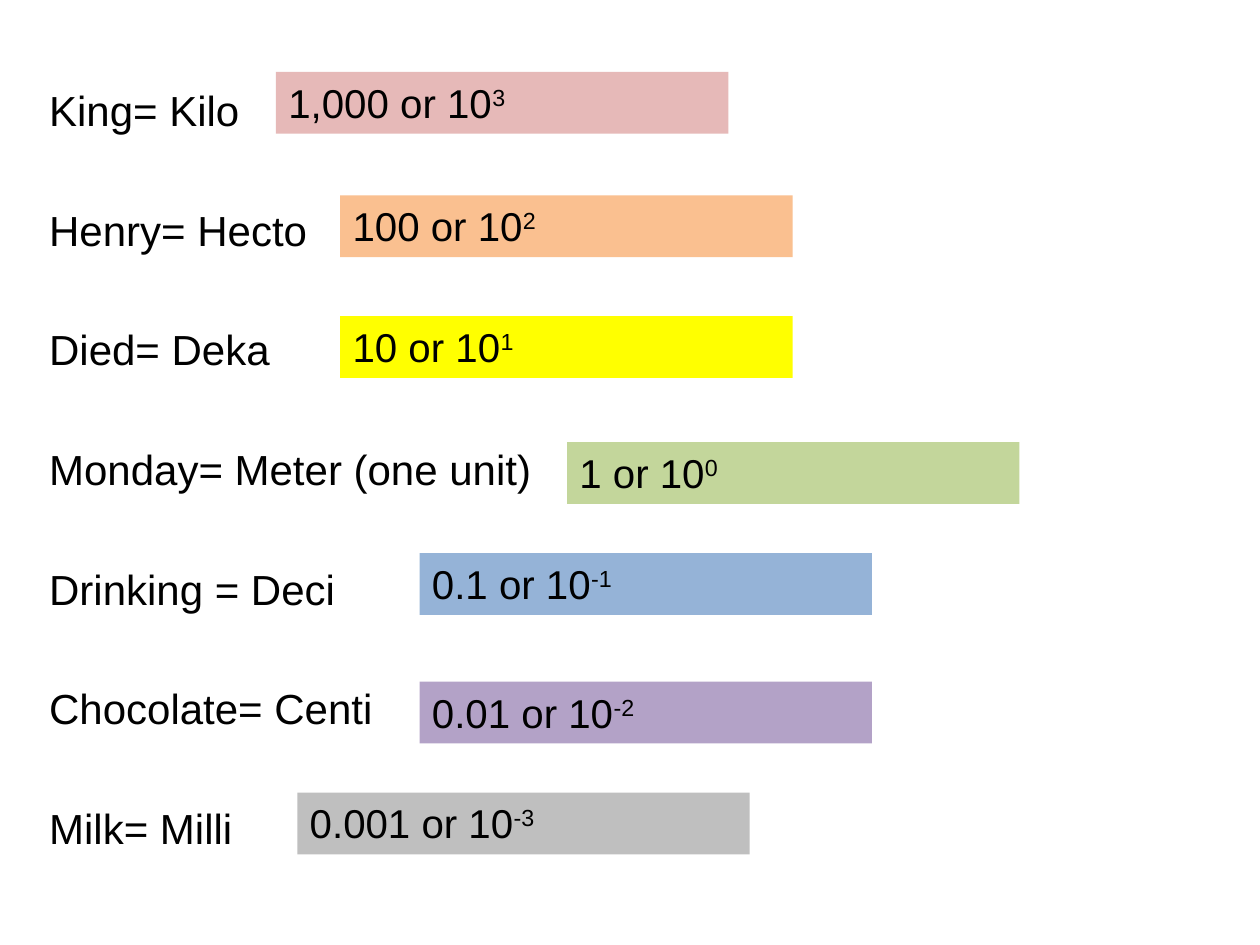
from dataclasses import dataclass

from pptx import Presentation
from pptx import util as u
from pptx.dml.color import RGBColor
from pptx.enum import shapes, text


@dataclass(frozen=True)
class Theme:
    font: str = "Arial"
    ink: str = "000000"
    word_size: int = 24
    value_size: int = 23
    word_gap: float = 39.6
    kilo: str = "E6B9B8"
    hecto: str = "FAC090"
    deka: str = "FFFF00"
    meter: str = "C3D69B"
    deci: str = "95B3D7"
    centi: str = "B3A2C7"
    milli: str = "BFBFBF"


theme = Theme()

# Mnemonic word, value, exponent, bar left, bar top, bar colour
ROWS = [
    ("King= Kilo", "1,000", "3", 2.19, 0.57, theme.kilo),
    ("Henry= Hecto", "100", "2", 2.7, 1.55, theme.hecto),
    ("Died= Deka", "10", "1", 2.7, 2.51, theme.deka),
    ("Monday= Meter (one unit)", "1", "0", 4.5, 3.51, theme.meter),
    ("Drinking = Deci", "0.1", "-1", 3.33, 4.39, theme.deci),
    ("Chocolate= Centi", "0.01", "-2", 3.33, 5.41, theme.centi),
    ("Milk= Milli", "0.001", "-3", 2.36, 6.29, theme.milli),
]
BAR_W, BAR_H = u.Inches(3.59), u.Inches(0.49)


def add_run(p, content, size):
    r = p.add_run()
    r.text = content
    for name, value in {"name": theme.font, "size": u.Pt(size)}.items():
        setattr(r.font, name, value)
    r.font.color.rgb = RGBColor.from_string(theme.ink)
    return r


prs = Presentation()
prs.slide_width, prs.slide_height = u.Inches(10), u.Inches(7.5)
s = prs.slides.add_slide(prs.slide_layouts[6])

# Mnemonic list
tf = s.shapes.add_textbox(
    u.Inches(0.3), u.Inches(0.55), u.Inches(9.4), u.Inches(6.65)
).text_frame
list_format = {
    "word_wrap": True,
    "vertical_anchor": text.MSO_ANCHOR.TOP,
    "margin_left": u.Inches(0.09),
    "margin_right": u.Inches(0.09),
    "margin_top": u.Inches(0.12),
}
for name, value in list_format.items():
    setattr(tf, name, value)
for i, row in enumerate(ROWS):
    p = tf.paragraphs[0] if i == 0 else tf.add_paragraph()
    p.space_after = u.Pt(theme.word_gap)
    add_run(p, row[0], theme.word_size)

# Coloured bars with the powers of ten
bar_format = {
    "word_wrap": True,
    "auto_size": text.MSO_AUTO_SIZE.SHAPE_TO_FIT_TEXT,
    "vertical_anchor": text.MSO_ANCHOR.TOP,
}
for _, amount, exponent, left, top, color in ROWS:
    sp = s.shapes.add_shape(
        shapes.MSO_SHAPE.RECTANGLE, u.Inches(left), u.Inches(top), BAR_W, BAR_H
    )
    sp.shadow.inherit = False
    sp.fill.solid()
    sp.fill.fore_color.rgb = RGBColor.from_string(color)
    sp.line.fill.background()
    for name, value in bar_format.items():
        setattr(sp.text_frame, name, value)
    p = sp.text_frame.paragraphs[0]
    p.alignment = text.PP_ALIGN.LEFT
    add_run(p, f"{amount} or 10", theme.value_size)
    r = add_run(p, exponent, theme.value_size)
    r._r.get_or_add_rPr().set("baseline", "30000")

prs.save("out.pptx")
